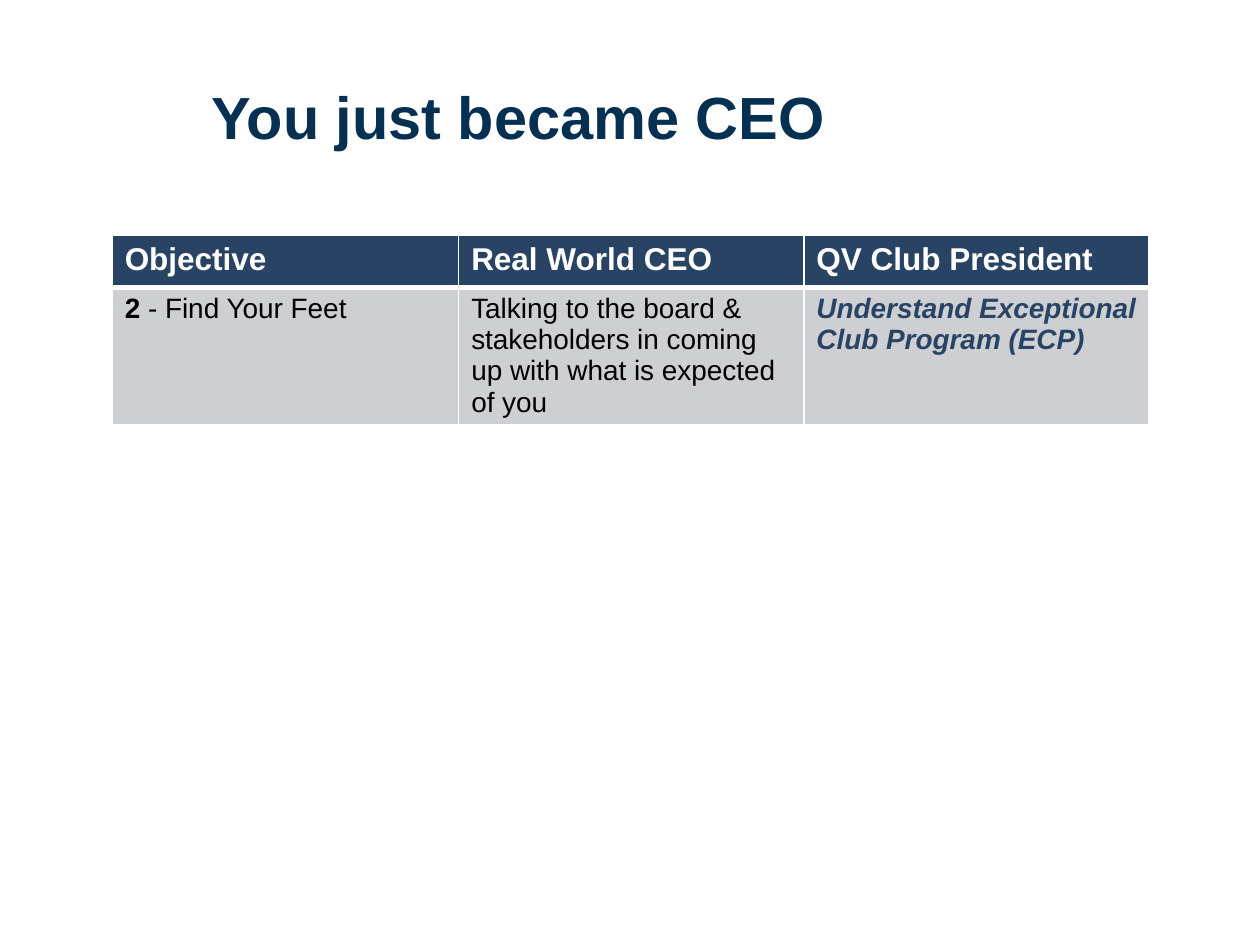
from dataclasses import dataclass

from pptx import Presentation
from pptx import util as u
from pptx.dml.color import RGBColor
from pptx.enum import text
from pptx.oxml import parse_xml
from pptx.oxml.ns import nsdecls

NAVY, SLATE, GREY = "063052", "294364", "CDCFD3"
WHITE, BLACK = "FFFFFF", "000000"


@dataclass
class Run:
    text: str
    size: int
    color: str
    bold: bool = False
    italic: bool = False


@dataclass
class Cell:
    runs: list[Run]
    fill: str
    bottom: int = 1


def rgb(value: str) -> RGBColor:
    return RGBColor.from_string(value)


def add_run(p, run: Run) -> None:
    r = p.add_run()
    r.text = run.text
    formats = {"name": "Arial", "size": u.Pt(run.size),
               "bold": run.bold, "italic": run.italic}
    for name, value in formats.items():
        setattr(r.font, name, value)
    r.font.color.rgb = rgb(run.color)


def set_borders(cell, widths: dict[str, int], color: str) -> None:
    tc_pr = cell._tc.get_or_add_tcPr()
    # Border lines must come before the fill
    for i, (side, width) in enumerate(widths.items()):
        tc_pr.insert(i, parse_xml(
            f'<a:{side} {nsdecls("a")} w="{u.Pt(width)}"><a:solidFill>'
            f'<a:srgbClr val="{color}"/></a:solidFill></a:{side}>'))


def draw_cell(cell, content: Cell) -> None:
    cell.fill.solid()
    cell.fill.fore_color.rgb = rgb(content.fill)
    for run in content.runs:
        add_run(cell.text_frame.paragraphs[0], run)
    set_borders(cell, {"lnL": 1, "lnR": 1, "lnT": 1, "lnB": content.bottom}, WHITE)


def header(label: str) -> Cell:
    return Cell([Run(label, 18, WHITE, bold=True)], SLATE, bottom=3)


ROWS = [
    [header(label) for label in ("Objective", "Real World CEO", "QV Club President")],
    [
        Cell([Run("2", 16, BLACK, bold=True), Run(" - Find Your Feet", 16, BLACK)], GREY),
        Cell([Run("Talking to the board & stakeholders in coming up with "
                  "what is expected of you", 16, BLACK)], GREY),
        Cell([Run("Understand Exceptional Club Program (ECP)", 16, SLATE,
                  bold=True, italic=True)], GREY),
    ],
]
COLUMN_WIDTHS = [2.75, 2.74, 2.74]
ROW_HEIGHT = 0.41


def main() -> None:
    prs = Presentation()
    prs.slide_width, prs.slide_height = u.Inches(10), u.Inches(7.5)
    s = prs.slides.add_slide(prs.slide_layouts[5])

    # Title
    title = s.shapes.title
    title.left, title.top = u.Inches(1.58), u.Inches(0.58)
    title.width, title.height = u.Inches(8.17), u.Inches(0.67)
    tf = title.text_frame
    tf.vertical_anchor = text.MSO_ANCHOR.MIDDLE
    p = tf.paragraphs[0]
    p.alignment = text.PP_ALIGN.LEFT
    add_run(p, Run("You just became CEO", 34, NAVY, bold=True))

    # Objectives table
    table = s.shapes.add_table(
        len(ROWS), len(COLUMN_WIDTHS), u.Inches(0.89), u.Inches(1.87),
        u.Inches(sum(COLUMN_WIDTHS)), u.Inches(ROW_HEIGHT * len(ROWS))).table
    for column, width in zip(table.columns, COLUMN_WIDTHS):
        column.width = u.Inches(width)
    for row, contents in zip(table.rows, ROWS):
        row.height = u.Inches(ROW_HEIGHT)
        for cell, content in zip(row.cells, contents):
            draw_cell(cell, content)

    prs.save("out.pptx")


if __name__ == "__main__":
    main()
